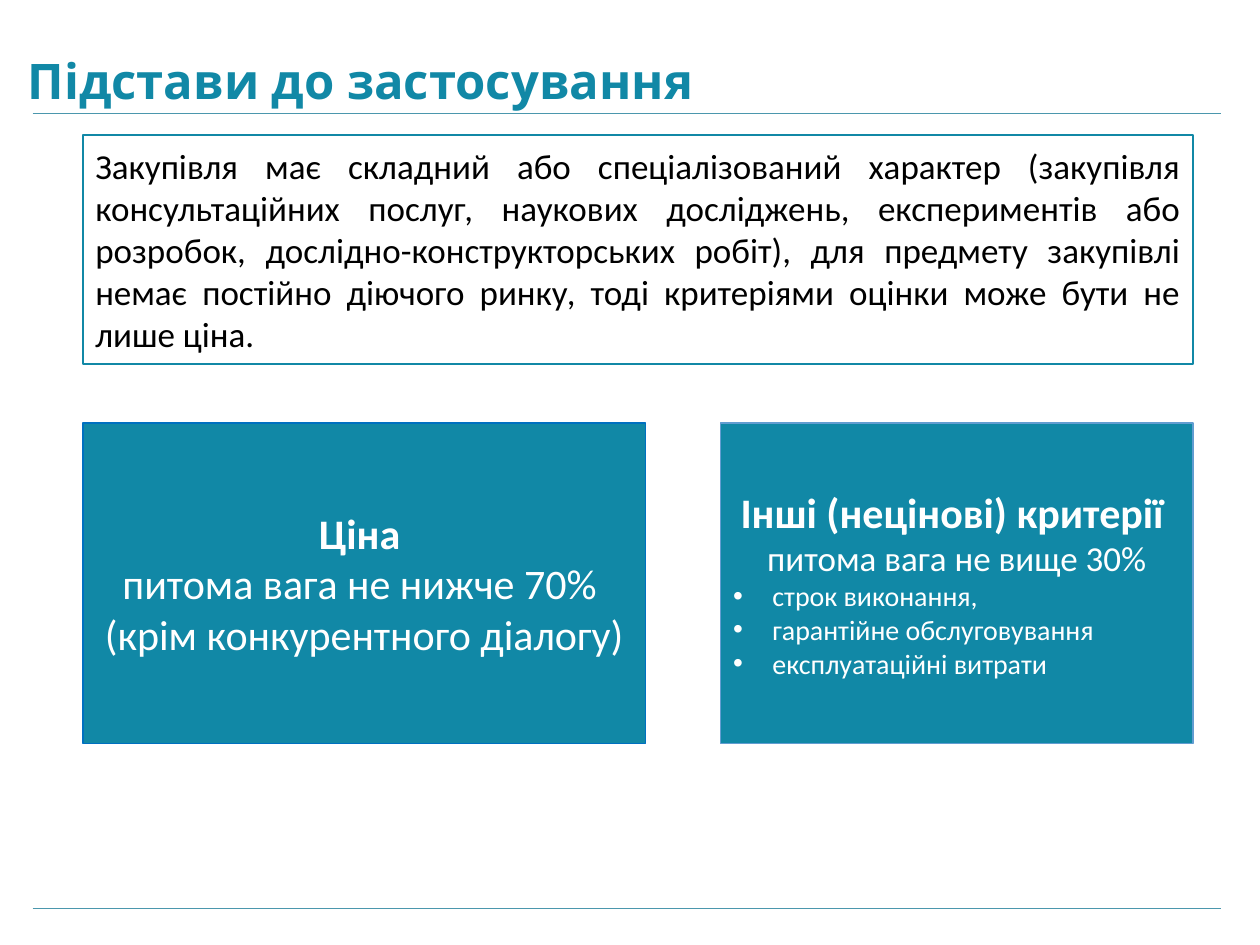
"""Build the slide on the grounds for using non-price award criteria."""
from lxml import etree
from pptx import Presentation
from pptx.dml.color import RGBColor
from pptx.enum.shapes import MSO_CONNECTOR, MSO_SHAPE
from pptx.enum.text import MSO_ANCHOR, MSO_AUTO_SIZE, PP_ALIGN
from pptx.oxml.ns import qn
from pptx.util import Pt

STRAIGHT = MSO_CONNECTOR.STRAIGHT
RECTANGLE = MSO_SHAPE.RECTANGLE
MIDDLE = MSO_ANCHOR.MIDDLE
NO_AUTOFIT = MSO_AUTO_SIZE.NONE
LEFT, CENTER, JUSTIFY = PP_ALIGN.LEFT, PP_ALIGN.CENTER, PP_ALIGN.JUSTIFY

COLORS = {
    "teal": "1188A6",
    "rule": "4B97AD",
    "blue": "0070C0",
    "sky": "629DD1",
    "black": "000000",
    "white": "FFFFFF",
}
BULLET_INDENT = 22.5


def rgb(name):
    return RGBColor.from_string(COLORS[name])


def add_run(paragraph, text, font, size, color, bold=False):
    run = paragraph.add_run()
    run.text = text
    run.font.name = font
    run.font.size = Pt(size)
    run.font.bold = bold
    run.font.color.rgb = rgb(color)


prs = Presentation()
prs.slide_width, prs.slide_height = Pt(720), Pt(540)
slide = prs.slides.add_slide(prs.slide_layouts[5])

for rule_y in (519, 64.8):
    rule = slide.shapes.add_connector(STRAIGHT, Pt(18.7), Pt(rule_y), Pt(697.7), Pt(rule_y))
    rule.line.color.rgb = rgb("rule")
    rule.line.width = Pt(0.75)
    etree.SubElement(rule._element.spPr, qn("a:effectLst"))

heading = slide.shapes.title
heading.left, heading.top, heading.width, heading.height = Pt(8.6), Pt(37.4), Pt(673.2), Pt(49)
heading_frame = heading.text_frame
heading_frame.auto_size = NO_AUTOFIT
heading_frame.vertical_anchor = MIDDLE
heading_frame.margin_left = heading_frame.margin_right = heading_frame.margin_top = Pt(7.2)
heading_frame.margin_bottom = Pt(39.5)
heading_frame.paragraphs[0].alignment = LEFT
add_run(heading_frame.paragraphs[0], "Підстави до застосування", "Karla", 28, "teal", True)

condition = (
    "Закупівля має складний або спеціалізований характер (закупівля консультаційних послуг, "
    "наукових досліджень, експериментів або розробок, дослідно-конструкторських робіт), "
    "для предмету закупівлі немає постійно діючого ринку, тоді критеріями оцінки може бути "
    "не лише ціна."
)
price = [
    ("Ціна ", 24, True, CENTER, False),
    ("питома вага не нижче 70% ", 24, False, CENTER, False),
    ("(крім конкурентного діалогу)", 24, False, CENTER, False),
]
other_criteria = [
    ("Інші (нецінові) критерії ", 24, True, CENTER, False),
    ("питома вага не вище 30%", 20, False, CENTER, False),
    ("строк виконання,", 16, False, LEFT, True),
    ("гарантійне обслуговування", 16, False, LEFT, True),
    ("експлуатаційні витрати", 16, False, LEFT, True),
]
panels = [
    ((47.4, 77, 634.4, 131), None, "teal", 1, "black", [(condition, 20, False, JUSTIFY, False)]),
    ((47.4, 241.7, 321.6, 183), "teal", "blue", 0.75, "white", price),
    ((411.8, 241.7, 270, 183), "teal", "sky", 0.75, "white", other_criteria),
]

for box, fill, border, border_width, text_color, lines in panels:
    panel = slide.shapes.add_shape(RECTANGLE, *map(Pt, box))
    panel.shadow.inherit = False
    if fill:
        panel.fill.solid()
        panel.fill.fore_color.rgb = rgb(fill)
    else:
        panel.fill.background()
    panel.line.color.rgb = rgb(border)
    panel.line.width = Pt(border_width)
    frame = panel.text_frame
    frame.word_wrap = True
    frame.vertical_anchor = MIDDLE
    for index, (text, size, bold, alignment, bulleted) in enumerate(lines):
        paragraph = frame.add_paragraph() if index else frame.paragraphs[0]
        paragraph.alignment = alignment
        if bulleted:
            properties = paragraph._p.get_or_add_pPr()
            properties.set("marL", str(Pt(BULLET_INDENT)))
            properties.set("indent", str(-Pt(BULLET_INDENT)))
            bullet_color = etree.SubElement(properties, qn("a:buClr"))
            etree.SubElement(bullet_color, qn("a:srgbClr"), val=COLORS["white"])
            etree.SubElement(properties, qn("a:buFont"), typeface="Arial")
            etree.SubElement(properties, qn("a:buChar"), char="•")
        add_run(paragraph, text, "Calibri", size, text_color, bold)

prs.save("out.pptx")
